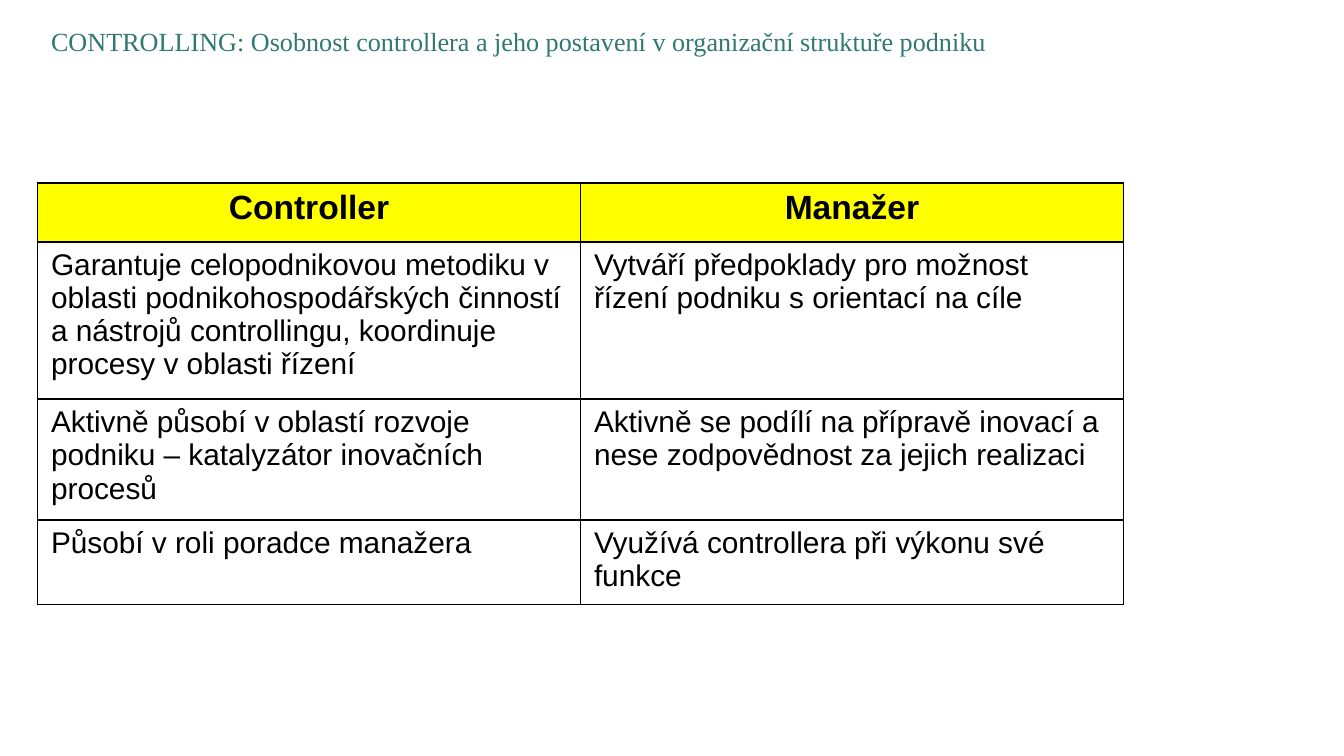
import pptx
import pptx.util
import pptx.dml.color
import pptx.enum.text
from lxml import etree
from pptx.util import Inches, Pt

COLORS = {"title": "307871", "header": "FFFF00", "text": "000000", "border": "000000"}
ROWS = [
    ("Controller", "Manažer"),
    ("Garantuje celopodnikovou metodiku v oblasti podnikohospodářských činností "
     "a nástrojů controllingu, koordinuje procesy v oblasti řízení",
     "Vytváří předpoklady pro možnost řízení podniku s orientací na cíle"),
    ("Aktivně působí v oblastí rozvoje podniku – katalyzátor inovačních procesů",
     "Aktivně se podílí na přípravě inovací a nese zodpovědnost za jejich realizaci"),
    ("Působí v roli poradce manažera",
     "Využívá controllera při výkonu své funkce"),
]
ROW_HEIGHTS = [0.44, 1.17, 0.9, 0.63]
A = "{http://schemas.openxmlformats.org/drawingml/2006/main}"


def format_text(p, font, size, color, bold=False):
    for r in p.runs:
        r.font.name = font
        r.font.size = Pt(size)
        r.font.bold = bold
        r.font.color.rgb = pptx.dml.color.RGBColor.from_string(COLORS[color])


def add_borders(cell):
    """Draw a 1 pt line on all four sides; must run before the fill is set."""
    tc_pr = cell._tc.get_or_add_tcPr()
    for side in ("lnL", "lnR", "lnT", "lnB"):
        ln = etree.SubElement(tc_pr, A + side, w=str(Pt(1)))
        fill = etree.SubElement(ln, A + "solidFill")
        etree.SubElement(fill, A + "srgbClr", val=COLORS["border"])


prs = pptx.Presentation()
prs.slide_width = Inches(10)
prs.slide_height = Inches(10) * 9 // 16
s = prs.slides.add_slide(prs.slide_layouts[5])

title = s.shapes.title
title.left, title.top = Inches(0.28), Inches(0.14)
title.width, title.height = Inches(8.19), Inches(0.55)
tf = title.text_frame
tf.text = "CONTROLLING: Osobnost controllera a jeho postavení v organizační struktuře podniku"
tf.word_wrap = True
tf.auto_size = pptx.enum.text.MSO_AUTO_SIZE.NONE
tf.vertical_anchor = pptx.enum.text.MSO_ANCHOR.TOP
tf.paragraphs[0].alignment = pptx.enum.text.PP_ALIGN.LEFT
format_text(tf.paragraphs[0], "Times New Roman", 14, "title")

table = s.shapes.add_table(len(ROWS), 2, Inches(0.28), Inches(1.36),
                           Inches(8.08), Inches(sum(ROW_HEIGHTS))).table
table.horz_banding = False
for i, (texts, height) in enumerate(zip(ROWS, ROW_HEIGHTS)):
    table.rows[i].height = Inches(height)
    header = i == 0
    for j, text in enumerate(texts):
        cell = table.cell(i, j)
        add_borders(cell)
        if header:
            cell.fill.solid()
            cell.fill.fore_color.rgb = pptx.dml.color.RGBColor.from_string(COLORS["header"])
        else:
            cell.fill.background()
        p = cell.text_frame.paragraphs[0]
        p.text = text
        p.alignment = pptx.enum.text.PP_ALIGN.CENTER if header else pptx.enum.text.PP_ALIGN.LEFT
        format_text(p, "Arial", 18 if header else 16, "text", bold=header)

prs.save("out.pptx")
